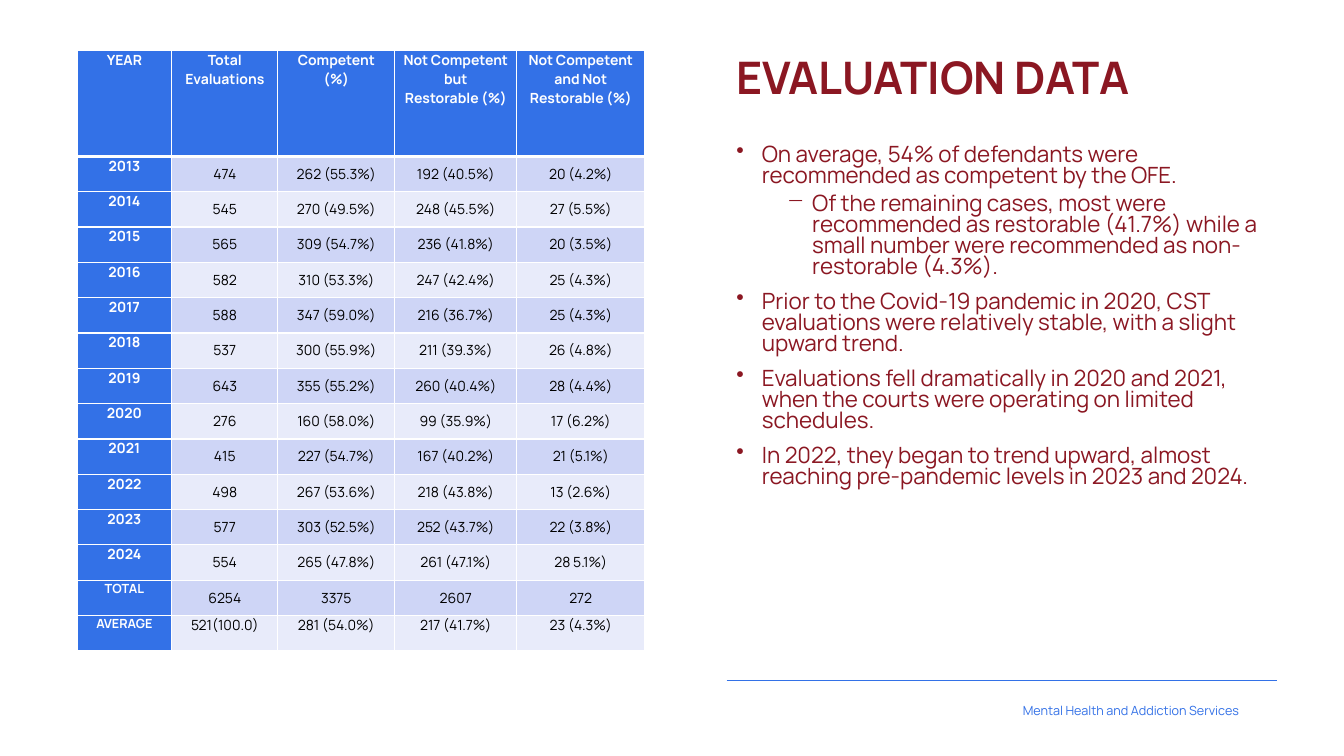
from lxml.etree import SubElement
from pptx import Presentation
from pptx.dml.color import RGBColor
from pptx.enum.shapes import MSO_CONNECTOR
from pptx.enum.text import MSO_ANCHOR, PP_ALIGN
from pptx.oxml.ns import qn
from pptx.util import Cm, Pt

COLORS = {"blue": "3371E7", "red": "8B1722", "white": "FFFFFF", "black": "000000",
          "dark_band": "CED5F6", "light_band": "E8EBFA"}
FONT = "Manrope"
COLUMN_WIDTHS = [2.39, 2.67, 2.95, 3.07, 3.23]
HEADER_HEIGHT, ROW_HEIGHT = 2.67, 0.89
HEADERS = ["YEAR", "Total Evaluations", "Competent (%)",
           "Not Competent but\nRestorable (%)", "Not Competent and Not Restorable (%)"]
ROWS = [
    ["2013", "474", "262 (55.3%)", "192 (40.5%)", "20 (4.2%)"],
    ["2014", "545", "270 (49.5%)", "248 (45.5%)", "27 (5.5%)"],
    ["2015", "565", "309 (54.7%)", "236 (41.8%)", "20 (3.5%)"],
    ["2016", "582", "310 (53.3%)", "247 (42.4%)", "25 (4.3%)"],
    ["2017", "588", "347 (59.0%)", "216 (36.7%)", "25 (4.3%)"],
    ["2018", "537", "300 (55.9%)", "211 (39.3%)", "26 (4.8%)"],
    ["2019", "643", "355 (55.2%)", "260 (40.4%)", "28 (4.4%)"],
    ["2020", "276", "160 (58.0%)", "99 (35.9%)", "17 (6.2%)"],
    ["2021", "415", "227 (54.7%)", "167 (40.2%)", "21 (5.1%)"],
    ["2022", "498", "267 (53.6%)", "218 (43.8%)", "13 (2.6%)"],
    ["2023", "577", "303 (52.5%)", "252 (43.7%)", "22 (3.8%)"],
    ["2024", "554", "265 (47.8%)", "261 (47.1%)", "28 5.1%)"],
    ["TOTAL", "6254", "3375", "2607", "272"],
    ["AVERAGE", "521(100.0)", "281 (54.0%)", "217 (41.7%)", "23 (4.3%)"],
]
FINDINGS = [
    (0, "On average, 54% of defendants were recommended as competent by the OFE."),
    (1, "Of the remaining cases, most were recommended as restorable (41.7%) while a small "
        "number were recommended as non-restorable (4.3%)."),
    (0, "Prior to the Covid-19 pandemic in 2020, CST evaluations were relatively stable, "
        "with a slight upward trend."),
    (0, "Evaluations fell dramatically in 2020 and 2021, when the courts were operating on "
        "limited schedules."),
    (0, "In 2022, they began to trend upward, almost reaching pre-pandemic levels in 2023 "
        "and 2024."),
]


def color(name):
    """Return the named colour."""
    return RGBColor.from_string(COLORS[name])


def add_run(paragraph, text, size, color_name, bold=False):
    """Add one formatted run to a paragraph."""
    run = paragraph.add_run()
    run.text = text
    run.font.name = FONT
    run.font.size = Pt(size)
    run.font.bold = bold
    run.font.color.rgb = color(color_name)


def add_text_frame(slide, left, top, width, height):
    """Add a wrapping text box and return its text frame."""
    box = slide.shapes.add_textbox(Cm(left), Cm(top), Cm(width), Cm(height))
    box.text_frame.word_wrap = True
    return box.text_frame


def add_line_of_text(slide, place, text, size, color_name, bold=False,
                     alignment=PP_ALIGN.LEFT, anchor=MSO_ANCHOR.TOP):
    """Add a text box that holds a single paragraph."""
    frame = add_text_frame(slide, *place)
    frame.vertical_anchor = anchor
    paragraph = frame.paragraphs[0]
    paragraph.alignment = alignment
    paragraph.line_spacing = 0.9
    add_run(paragraph, text, size, color_name, bold)


def add_bullets(slide, place, findings):
    """Add a two-level bulleted list."""
    frame = add_text_frame(slide, *place)
    for index, (level, text) in enumerate(findings):
        paragraph = frame.add_paragraph() if index else frame.paragraphs[0]
        paragraph.level = level
        properties = paragraph._p.get_or_add_pPr()
        properties.set("marL", str(Cm(0.64 + 1.27 * level)))
        properties.set("indent", str(-Cm(0.64)))
        SubElement(properties, qn("a:buChar")).set("char", "•−"[level])
        paragraph.line_spacing = 0.78
        if index:
            paragraph.space_before = Pt(5 if level else 10)
        add_run(paragraph, text, 16, "red")


def add_borders(cell, bottom_width):
    """Draw white borders round a table cell."""
    properties = cell._tc.get_or_add_tcPr()
    for side, width in (("L", 1), ("R", 1), ("T", 1), ("B", bottom_width)):
        line = SubElement(properties, qn(f"a:ln{side}"), w=str(Pt(width)))
        fill = SubElement(line, qn("a:solidFill"))
        SubElement(fill, qn("a:srgbClr"), val=COLORS["white"])


def fill_cell(cell, text, size, text_color, fill_color, bold, anchor, bottom_width):
    """Write and format one table cell."""
    cell.margin_left = cell.margin_right = Cm(0.18)
    cell.margin_top = cell.margin_bottom = 0
    cell.vertical_anchor = anchor
    add_borders(cell, bottom_width)
    cell.fill.solid()
    cell.fill.fore_color.rgb = color(fill_color)
    for index, part in enumerate(text.split("\n")):
        frame = cell.text_frame
        paragraph = frame.add_paragraph() if index else frame.paragraphs[0]
        paragraph.alignment = PP_ALIGN.CENTER
        add_run(paragraph, part, size, text_color, bold)


def add_evaluation_table(slide, left, top):
    """Add the table of yearly evaluations."""
    rows = [HEADERS] + ROWS
    height = HEADER_HEIGHT + ROW_HEIGHT * len(ROWS)
    table = slide.shapes.add_table(len(rows), len(HEADERS), Cm(left), Cm(top),
                                   Cm(sum(COLUMN_WIDTHS)), Cm(height)).table
    for column, width in zip(table.columns, COLUMN_WIDTHS):
        column.width = Cm(width)
    for row_index, values in enumerate(rows):
        is_header = row_index == 0
        table.rows[row_index].height = Cm(HEADER_HEIGHT if is_header else ROW_HEIGHT)
        band = "dark_band" if row_index % 2 else "light_band"
        for column_index, text in enumerate(values):
            is_label = is_header or column_index == 0
            at_top = is_label or values[0] == "AVERAGE"
            fill_cell(table.cell(row_index, column_index), text,
                      size=9 if text in ("TOTAL", "AVERAGE") else 10,
                      text_color="white" if is_label else "black",
                      fill_color="blue" if is_label else band,
                      bold=is_label,
                      anchor=MSO_ANCHOR.TOP if at_top else MSO_ANCHOR.MIDDLE,
                      bottom_width=3 if is_header else 1)


def add_rule(slide, left, right, top):
    """Add the horizontal line above the footer."""
    rule = slide.shapes.add_connector(MSO_CONNECTOR.STRAIGHT, Cm(left), Cm(top),
                                      Cm(right), Cm(top))
    rule.line.color.rgb = color("blue")
    rule.line.width = Pt(1.25)
    SubElement(rule._element.spPr, qn("a:effectLst"))


def main():
    """Build the slide and save it."""
    presentation = Presentation()
    presentation.slide_width = Cm(33.87)
    presentation.slide_height = Cm(19.05)
    slide = presentation.slides.add_slide(presentation.slide_layouts[6])
    add_rule(slide, 18.31, 32.18, 17.15)
    add_line_of_text(slide, (18.31, 1.27, 13.87, 2.57), "EVALUATION DATA", 32, "red", bold=True)
    add_bullets(slide, (18.31, 3.56, 13.87, 11.96), FINDINGS)
    add_line_of_text(slide, (16.23, 17.5, 15.24, 0.84), "Mental Health and Addiction Services",
                     9, "blue", alignment=PP_ALIGN.RIGHT, anchor=MSO_ANCHOR.MIDDLE)
    add_evaluation_table(slide, 1.94, 1.27)
    presentation.save("out.pptx")


if __name__ == "__main__":
    main()
